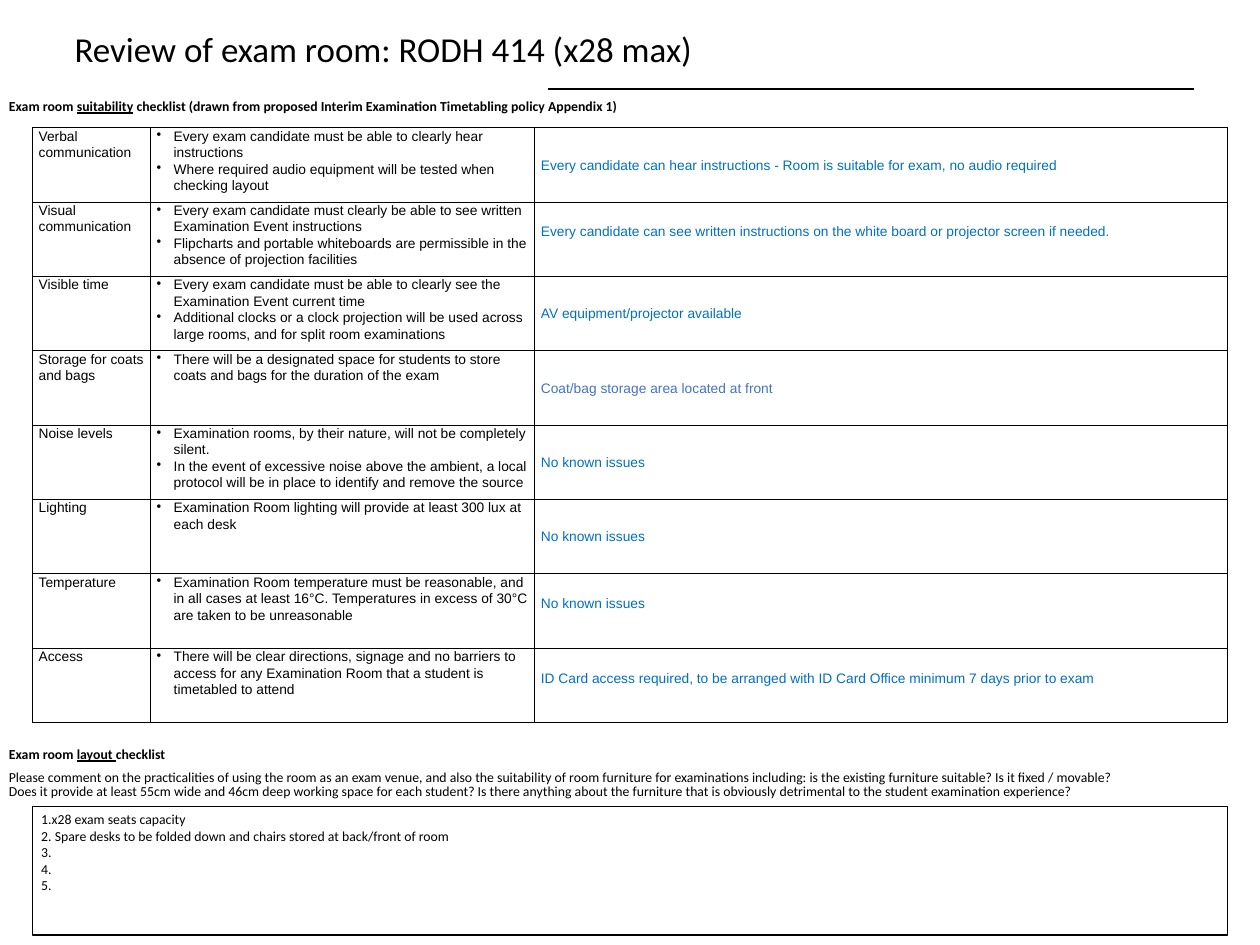
"""Build the exam room review slide with its suitability and layout checklists."""
from lxml import etree
from pptx import Presentation, util as u
from pptx.dml.color import RGBColor
from pptx.enum import shapes, text
from pptx.oxml import ns

COLOURS = {"ink": "000000", "paper": "FFFFFF", "answer": "0070C0", "storage": "4472C4"}
SUITABILITY = [
    ("Verbal communication",
     ["Every exam candidate must be able to clearly hear instructions",
      "Where required audio equipment will be tested when checking layout"],
     "Every candidate can hear instructions - Room is suitable for exam, no audio required", "answer", 0),
    ("Visual communication",
     ["Every exam candidate must clearly be able to see written Examination Event instructions",
      "Flipcharts and portable whiteboards are permissible in the absence of projection facilities"],
     "Every candidate can see written instructions on the white board or projector screen if needed.", "answer", 0.17),
    ("Visible time",
     ["Every exam candidate must be able to clearly see the Examination Event current time",
      "Additional clocks or a clock projection will be used across large rooms, and for split room examinations"],
     "AV equipment/projector available", "answer", 0),
    ("Storage for coats and bags",
     ["There will be a designated space for students to store coats and bags for the duration of the exam"],
     "Coat/bag storage area located at front", "storage", 0),
    ("Noise levels",
     ["Examination rooms, by their nature, will not be completely silent.",
      "In the event of excessive noise above the ambient, a local protocol will be in place to identify "
      "and remove the source"],
     "No known issues", "answer", 0),
    ("Lighting",
     ["Examination Room lighting will provide at least 300 lux at each desk"],
     "No known issues", "answer", 0),
    ("Temperature",
     ["Examination Room temperature must be reasonable, and in all cases at least 16°C. "
      "Temperatures in excess of 30°C are taken to be unreasonable"],
     "No known issues", "answer", 0.17),
    ("Access",
     ["There will be clear directions, signage and no barriers to access for any Examination Room "
      "that a student is timetabled to attend"],
     "ID Card access required, to be arranged with ID Card Office minimum 7 days prior to exam", "answer", 0.17),
]
GUIDANCE = (
    "Please comment on the practicalities of using the room as an exam venue, and also the suitability of "
    "room furniture for examinations including: is the existing furniture suitable? Is it fixed / movable? "
    "Does it provide at least 55cm wide and 46cm deep working space for each student? Is there anything about "
    "the furniture that is obviously detrimental to the student examination experience?")
LAYOUT_NOTES = ["1.x28 exam seats capacity",
                "2. Spare desks to be folded down and chairs stored at back/front of room",
                "3.", "4.", "5."]
TABLE_LEFT, TABLE_WIDTH = 2.57, 94.86

deck = Presentation()
deck.slide_width, deck.slide_height = u.Inches(14), u.Inches(10.5)
column, row = deck.slide_width / 100, deck.slide_height / 100
slide = deck.slides.add_slide(deck.slide_layouts[6])


def area(left, top, width, height):
    return [int(left * column), int(top * row), int(width * column), int(height * row)]


def write(frame, paragraphs, face="Calibri", size=11, colour="ink", spacing=None, before=0, bullet=False):
    frame.word_wrap = True
    for index, runs in enumerate(paragraphs):
        line = frame.paragraphs[0] if index == 0 else frame.add_paragraph()
        if bullet:
            properties = line._p.get_or_add_pPr()
            properties.set("marL", str(u.Inches(0.19)))
            properties.set("indent", str(-u.Inches(0.19)))
            etree.SubElement(properties, ns.qn("a:buChar"), char="•")
        layout = {"alignment": text.PP_ALIGN.LEFT, "line_spacing": spacing,
                  "space_before": u.Pt(before if index else 0)}
        for name, value in layout.items():
            setattr(line, name, value)
        for wording, style in [(runs, {})] if isinstance(runs, str) else runs:
            run = line.add_run()
            run.text = wording
            for name, value in {"name": face, "size": u.Pt(size), **style}.items():
                setattr(run.font, name, value)
            run.font.color.rgb = RGBColor.from_string(COLOURS[colour])


bold, marked = {"bold": True}, {"bold": True, "underline": True}
suitability_heading = [("Exam room ", bold), ("suitability", marked),
                       (" checklist (drawn from proposed Interim Examination Timetabling policy Appendix 1)", bold)]
layout_heading = [("Exam room ", bold), ("layout ", marked), ("checklist", bold)]
for place, wording, style in [
    ((5.21, 2.48, 89.57, 5.43), ["Review of exam room: RODH 414 (x28 max)"], {"size": 28}),
    ((0, 10.1, 90.57, 2.6), [suitability_heading], {"spacing": 0.9}),
    ((0, 78.67, 90.57, 6.5), [layout_heading, GUIDANCE], {"spacing": 0.9, "before": 6}),
]:
    write(slide.shapes.add_textbox(*area(*place)).text_frame, wording, **style)

checklist = slide.shapes.add_table(
    len(SUITABILITY), 3, *area(TABLE_LEFT, 13.52, TABLE_WIDTH, 7.87 * len(SUITABILITY))).table
checklist.first_row = checklist.horz_banding = False
for part, share in zip(checklist.columns, (9.36, 30.5, 55)):
    part.width = int(share * column)
for index, (topic, requirements, finding, colour, lift) in enumerate(SUITABILITY):
    checklist.rows[index].height = int(7.87 * row)
    contents = [([topic], {}, text.MSO_ANCHOR.TOP, 0),
                (requirements, {"bullet": True}, text.MSO_ANCHOR.TOP, 0),
                ([finding], {"colour": colour}, text.MSO_ANCHOR.MIDDLE, lift)]
    for cell, (wording, style, anchor, bottom) in zip(checklist.rows[index].cells, contents):
        write(cell.text_frame, wording, face="Arial", spacing=1.07, **style)
        margins = {"margin_left": 0.07, "margin_top": 0, "margin_right": 0.07, "margin_bottom": bottom}
        for name, value in margins.items():
            setattr(cell, name, u.Inches(value))
        cell.vertical_anchor = anchor
        borders = cell._tc.get_or_add_tcPr()
        for side in ("lnL", "lnR", "lnT", "lnB"):
            edge = etree.SubElement(borders, ns.qn(f"a:{side}"), w=str(u.Pt(1)))
            paint = etree.SubElement(edge, ns.qn("a:solidFill"))
            etree.SubElement(paint, ns.qn("a:srgbClr"), val=COLOURS["ink"])
        cell.fill.background()

notes_box = slide.shapes.add_shape(
    shapes.MSO_SHAPE.RECTANGLE, *area(TABLE_LEFT, 85.33, TABLE_WIDTH, 13.62))
notes_box.shadow.inherit = False
notes_box.fill.solid()
notes_box.fill.fore_color.rgb = RGBColor.from_string(COLOURS["paper"])
notes_box.text_frame.vertical_anchor = text.MSO_ANCHOR.TOP
write(notes_box.text_frame, LAYOUT_NOTES)

start_x, rule_y, end_x, _ = area(94.79, 9.43, 43.5, 0)
title_rule = slide.shapes.add_connector(shapes.MSO_CONNECTOR.STRAIGHT, start_x, rule_y, end_x, rule_y)
etree.SubElement(title_rule._element.spPr, ns.qn("a:effectLst"))
for outlined in (notes_box, title_rule):
    outlined.line.color.rgb = RGBColor.from_string(COLOURS["ink"])
    outlined.line.width = u.Pt(1)

deck.save("out.pptx")
